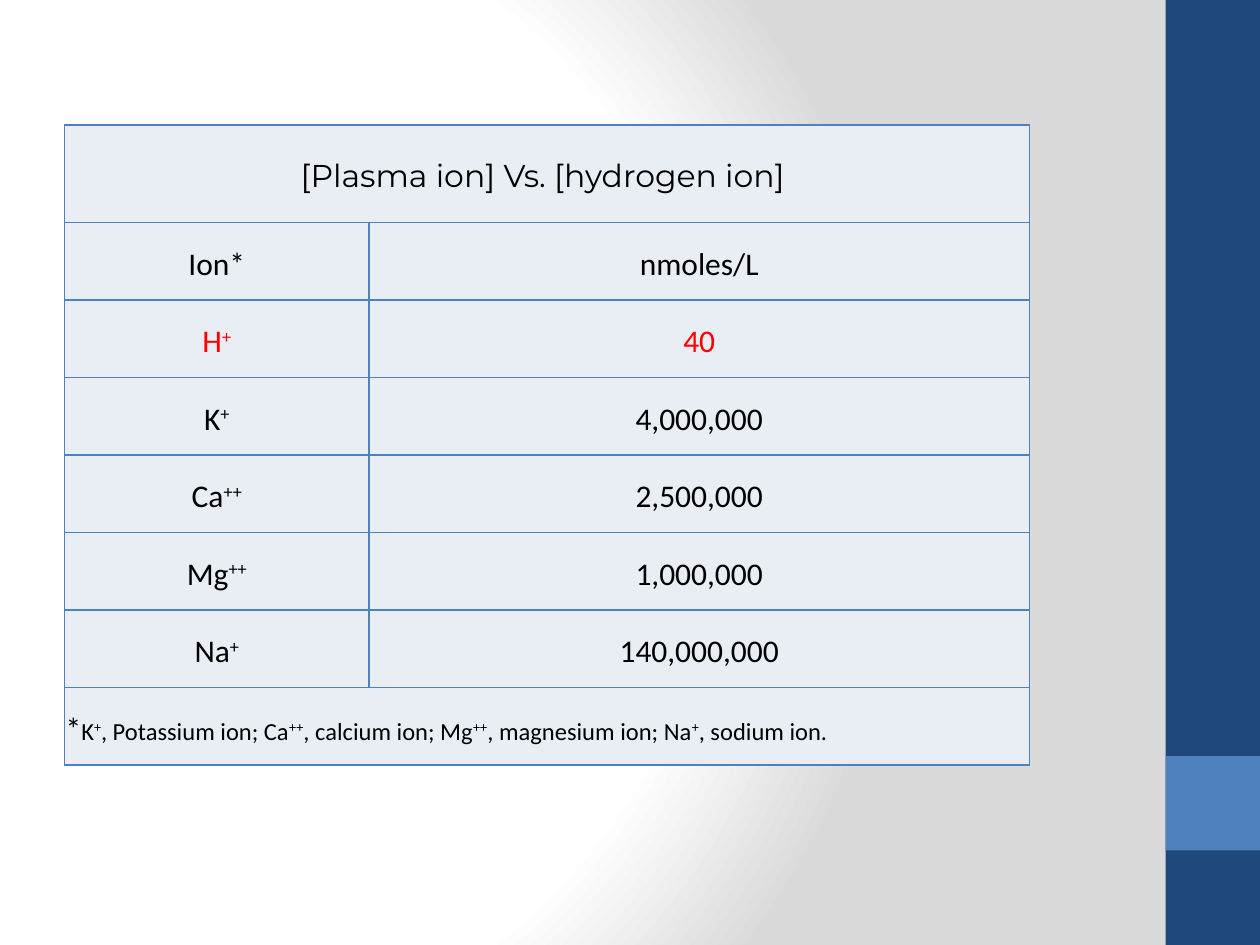
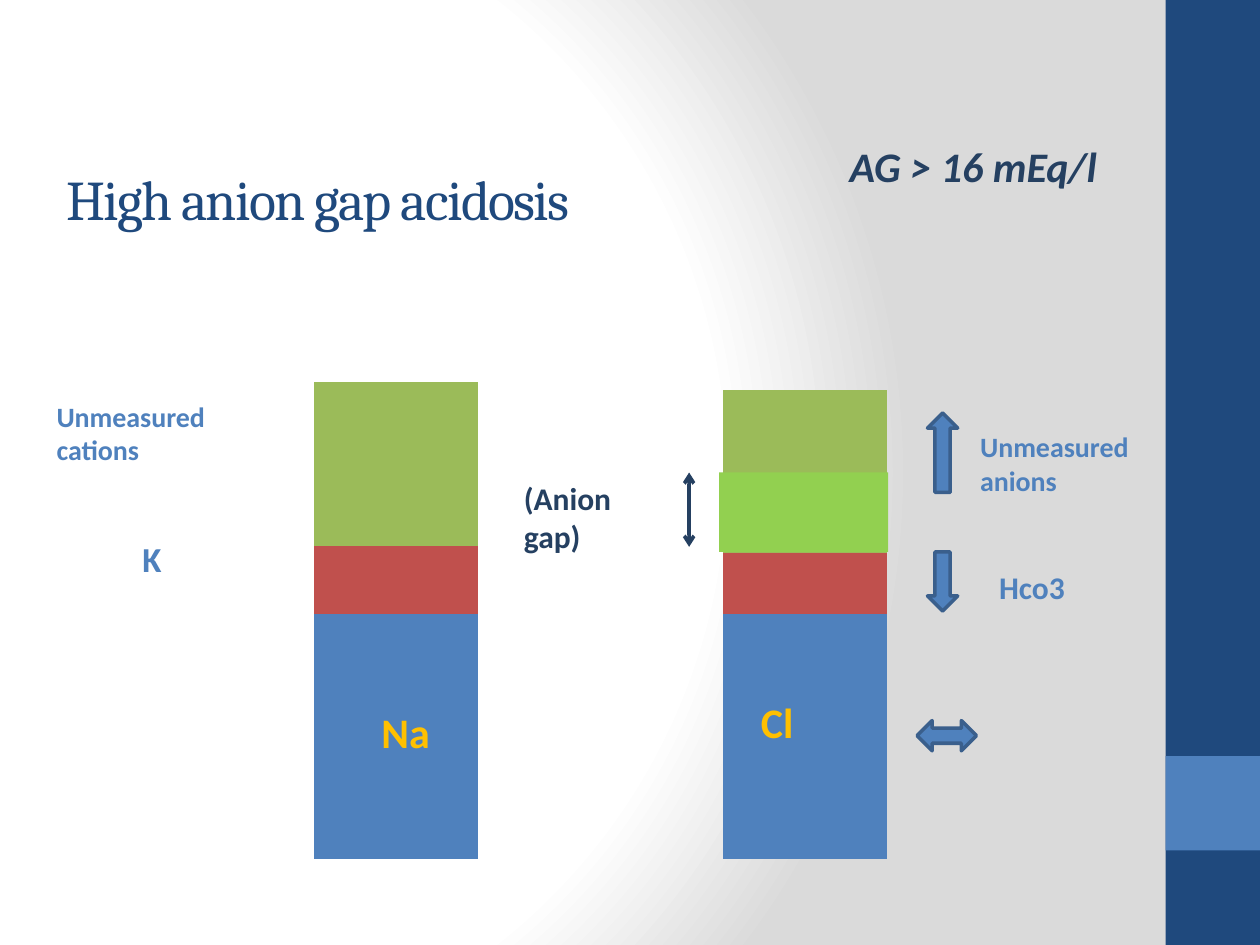
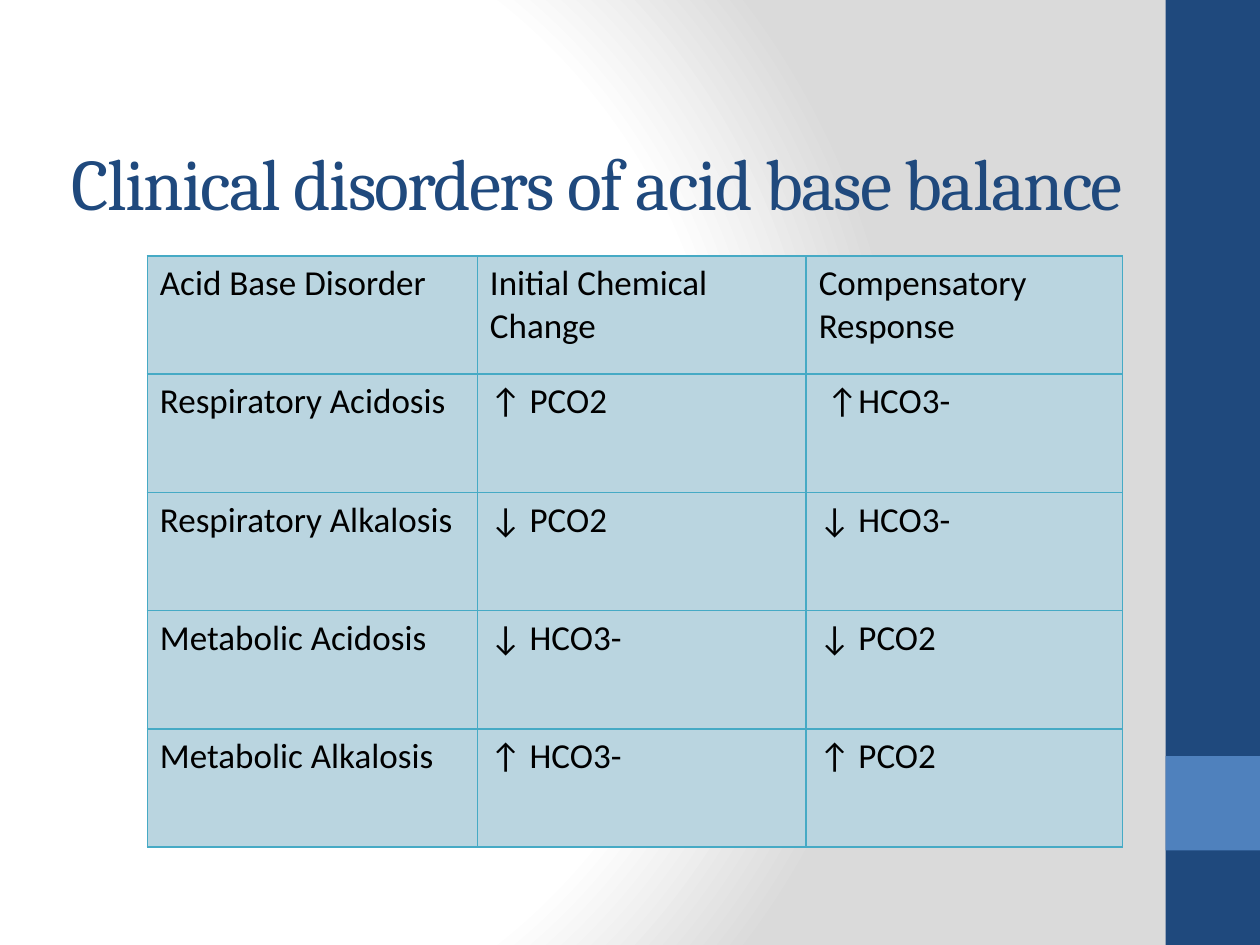
import lxml.etree
import pptx
import pptx.chart.data
import pptx.dml.color
import pptx.enum.chart
import pptx.enum.shapes
import pptx.enum.text
import pptx.oxml.ns
import pptx.util

Pt = pptx.util.Pt
RGBColor = pptx.dml.color.RGBColor
SHAPE = pptx.enum.shapes.MSO_SHAPE
ALIGN = pptx.enum.text.PP_ALIGN
ANCHOR = pptx.enum.text.MSO_ANCHOR
qn = pptx.oxml.ns.qn

WHITE = RGBColor(0xFF, 0xFF, 0xFF)
BLACK = RGBColor(0x00, 0x00, 0x00)
RED = RGBColor(0xFF, 0x00, 0x00)
GREY = RGBColor(0xDA, 0xDA, 0xDA)
NAVY = RGBColor(0x1F, 0x49, 0x7D)
DARK_BLUE = RGBColor(0x25, 0x40, 0x61)
BLUE = RGBColor(0x4F, 0x81, 0xBD)
ARROW_EDGE = RGBColor(0x3A, 0x5F, 0x8C)
BRICK = RGBColor(0xC0, 0x50, 0x4D)
OLIVE = RGBColor(0x9B, 0xBB, 0x59)
LIME = RGBColor(0x92, 0xD0, 0x50)
GOLD = RGBColor(0xFF, 0xC0, 0x00)
PALE_BLUE = RGBColor(0xE9, 0xED, 0xF4)
TEAL = RGBColor(0x46, 0xAA, 0xC5)
PALE_TEAL = RGBColor(0xBA, 0xD5, 0xE0)

BODY_FONT = "Calibri"
TITLE_FONT = "Cambria"


def add_xml(parent, tag, **attributes):
    return lxml.etree.SubElement(parent, qn(tag), **attributes)


def add_solid_fill(parent, color):
    add_xml(add_xml(parent, "a:solidFill"), "a:srgbClr", val=str(color))


def write(paragraph, text, size=18, color=BLACK, font=BODY_FONT, bold=False,
          italic=False, tracking=None, align=ALIGN.LEFT, line_spacing=None):
    """Append text to a paragraph; parts between ^ marks are superscript."""
    paragraph.alignment = align
    if line_spacing:
        paragraph.line_spacing = line_spacing
    for index, part in enumerate(text.split("^")):
        if not part:
            continue
        run = paragraph.add_run()
        run.text = part
        run.font.size = Pt(size)
        run.font.name = font
        run.font.color.rgb = color
        run.font.bold = bold
        run.font.italic = italic
        properties = run._r.get_or_add_rPr()
        if tracking:
            properties.set("spc", str(tracking * 100))
        if index % 2:
            properties.set("baseline", "30000")


class Deck:
    """Holds the shared style and the slide being filled."""

    def __init__(self):
        self.presentation = pptx.Presentation()
        self.presentation.slide_width = Pt(720)
        self.presentation.slide_height = Pt(540)
        self.slide = None
        self.set_background()

    def set_background(self):
        """Give the master a white glow that fades to grey on the right."""
        master = self.presentation.slide_master
        master.background.fill.gradient()
        gradient = master._element.find(".//" + qn("a:gradFill"))
        gradient.clear()
        stops = add_xml(gradient, "a:gsLst")
        for position, color in ((0, WHITE), (75, WHITE), (100, GREY)):
            stop = add_xml(stops, "a:gs", pos=str(position * 1000))
            add_xml(stop, "a:srgbClr", val=str(color))
        circle = add_xml(gradient, "a:path", path="circle")
        add_xml(circle, "a:fillToRect", l="20000", t="50000", r="100000", b="50000")

    def new_slide(self):
        self.slide = self.presentation.slides.add_slide(self.presentation.slide_layouts[6])
        self.shape(SHAPE.RECTANGLE, 666, 0, 54, 540, NAVY)
        self.shape(SHAPE.RECTANGLE, 666, 432, 54, 54, BLUE)

    def shape(self, kind, left, top, width, height, fill, edge=None, text=None, **style):
        shape = self.slide.shapes.add_shape(kind, Pt(left), Pt(top), Pt(width), Pt(height))
        shape.shadow.inherit = False
        shape.fill.solid()
        shape.fill.fore_color.rgb = fill
        if edge is None:
            shape.line.fill.background()
        else:
            shape.line.color.rgb = edge
            shape.line.width = Pt(2)
        if text:
            shape.text_frame.vertical_anchor = ANCHOR.TOP
            write(shape.text_frame.paragraphs[0], text, **style)

    def text(self, text, left, top, width, height, anchor=ANCHOR.TOP, **style):
        box = self.slide.shapes.add_textbox(Pt(left), Pt(top), Pt(width), Pt(height))
        box.text_frame.word_wrap = True
        box.text_frame.vertical_anchor = anchor
        write(box.text_frame.paragraphs[0], text, **style)

    def title(self, text, left, top, size):
        self.text(text, left, top, 648, 84, anchor=ANCHOR.MIDDLE, size=size,
                  color=NAVY, font=TITLE_FONT, tracking=-1)

    def double_arrow(self, x, top, bottom, color):
        arrow = self.slide.shapes.add_connector(
            pptx.enum.shapes.MSO_CONNECTOR.STRAIGHT, Pt(x), Pt(bottom), Pt(x), Pt(top))
        arrow.line.color.rgb = color
        arrow.line.width = Pt(2)
        line = arrow.line._get_or_add_ln()
        add_xml(line, "a:headEnd", type="arrow")
        add_xml(line, "a:tailEnd", type="arrow")
        add_xml(arrow._element.spPr, "a:effectLst")

    def table(self, left, top, widths, heights, fill, border):
        """Add an empty table with one fill and one border colour."""
        table = self.slide.shapes.add_table(
            len(heights), len(widths), Pt(left), Pt(top),
            Pt(sum(widths)), Pt(sum(heights))).table
        table.first_row = table.horz_banding = False
        for column, width in zip(table.columns, widths):
            column.width = Pt(width)
        for row, height in zip(table.rows, heights):
            row.height = Pt(height)
        for cell in table.iter_cells():
            properties = cell._tc.get_or_add_tcPr()
            for side in ("a:lnL", "a:lnR", "a:lnT", "a:lnB"):
                add_solid_fill(add_xml(properties, side, w=str(Pt(1))), border)
            cell.fill.solid()
            cell.fill.fore_color.rgb = fill
        return table

    def stacked_columns(self, left, top, width, height, categories, series, maximum):
        """Add a stacked column chart without axes; series are (name, values, colour)."""
        data = pptx.chart.data.CategoryChartData()
        data.categories = categories
        for name, values, _ in series:
            data.add_series(name, values)
        chart = self.slide.shapes.add_chart(
            pptx.enum.chart.XL_CHART_TYPE.COLUMN_STACKED,
            Pt(left), Pt(top), Pt(width), Pt(height), data).chart
        chart.has_legend = False
        chart.has_title = False
        chart.font.size = Pt(18)
        chart.font.name = BODY_FONT
        chart.font.color.rgb = BLACK
        chart.category_axis.visible = False
        chart.value_axis.visible = False
        chart.value_axis.has_major_gridlines = False
        chart.value_axis.minimum_scale = 0
        chart.value_axis.maximum_scale = maximum
        plot = chart.plots[0]
        plot.gap_width = 150
        plot.overlap = 100
        plot.vary_by_categories = False
        for column, (_, _, color) in zip(plot.series, series):
            column.format.fill.solid()
            column.format.fill.fore_color.rgb = color
        self.place_plot(chart, x=0.02, y=0.16, w=0.96, h=0.82)

    @staticmethod
    def place_plot(chart, **fractions):
        """Fix the inner plot area as fractions of the chart frame."""
        area = chart._chartSpace.find(".//" + qn("c:plotArea"))
        for automatic in area.findall(qn("c:layout")):
            area.remove(automatic)
        layout = add_xml(area, "c:layout")
        area.insert(0, layout)
        manual = add_xml(layout, "c:manualLayout")
        add_xml(manual, "c:layoutTarget", val="inner")
        for side in "xy":
            add_xml(manual, f"c:{side}Mode", val="edge")
        for side, fraction in fractions.items():
            add_xml(manual, f"c:{side}", val=str(fraction))


def plasma_ions(deck):
    deck.new_slide()
    ions = [("Ion*", "nmoles/L"), ("H^+^", "40"), ("K^+^", "4,000,000"),
            ("Ca^++^", "2,500,000"), ("Mg^++^", "1,000,000"), ("Na^+^", "140,000,000")]
    table = deck.table(36.8, 71.3, [174.2, 377.2], [56] + [44.3] * 7, PALE_BLUE, BLUE)
    for cell in table.iter_cells():
        cell.vertical_anchor = ANCHOR.MIDDLE
        cell.margin_left = cell.margin_right = Pt(0.7)
        cell.margin_top = cell.margin_bottom = Pt(0.7)
    for row in (0, 7):
        table.cell(row, 0).merge(table.cell(row, 1))

    centred = {"align": ALIGN.CENTER, "line_spacing": 1.15}
    heading = table.cell(0, 0).text_frame.paragraphs[0]
    write(heading, "[Plasma ion] Vs. [hydrogen ion] ", font="Montserrat", **centred)
    for row, values in enumerate(ions, 1):
        color = RED if values[0] == "H^+^" else BLACK
        for column, value in enumerate(values):
            write(table.cell(row, column).text_frame.paragraphs[0], value, color=color, **centred)
    note = table.cell(7, 0).text_frame.paragraphs[0]
    write(note, "*", line_spacing=1.15)
    write(note, "K^+^, Potassium ion; Ca^++^, calcium ion; Mg^++^, magnesium ion; "
                "Na^+^, sodium ion.", size=14, line_spacing=1.15)


def high_anion_gap(deck):
    deck.new_slide()
    deck.title("High anion gap acidosis", 31, 71.3, 32)
    deck.stacked_columns(99.4, 157, 487.4, 340.6, ["1", "2"], [
        ("Series 1", (100, 100), BLUE),
        ("Series 2", (28, 25), BRICK),
        ("Series 3", (67, 67), OLIVE)], maximum=200)
    deck.shape(SHAPE.RECTANGLE, 411, 270, 96.5, 45.4, LIME)
    deck.shape(SHAPE.RECTANGLE, 427.7, 394.6, 56.9, 39.6, BLUE,
               text="Cl", size=24, color=GOLD, bold=True)
    deck.shape(SHAPE.RECTANGLE, 201.6, 400.3, 51.1, 42.5, BLUE,
               text="Na", size=24, color=GOLD, bold=True, align=ALIGN.RIGHT)

    label = {"color": BLUE, "bold": True}
    deck.text("Unmeasured anions", 553, 242, 124.6, 51, size=16, **label)
    deck.text("Hco3", 563.8, 321.1, 73.4, 39.6, **label)
    deck.double_arrow(393.8, 270, 312.5, DARK_BLUE)
    deck.text("(Anion gap)", 292.3, 270, 79.2, 51, color=DARK_BLUE, bold=True)
    deck.text("Unmeasured cations", 25.2, 224.6, 130.3, 51, size=16, **label)
    deck.text("K", 59.8, 303.8, 39.6, 45.4, size=20, align=ALIGN.RIGHT, **label)
    for kind, left, top, width, height in (
            (SHAPE.UP_ARROW, 530, 236, 17.3, 45.4),
            (SHAPE.DOWN_ARROW, 530, 315.4, 17.3, 33.8),
            (SHAPE.LEFT_RIGHT_ARROW, 524, 411.8, 34, 17.3)):
        deck.shape(kind, left, top, width, height, BLUE, edge=ARROW_EDGE)
    deck.text(" AG > 16 mEq/l", 473, 77, 215.3, 36, size=24, color=DARK_BLUE,
              bold=True, italic=True)


def clinical_disorders(deck):
    deck.new_slide()
    deck.title("Clinical disorders of acid base balance", 33.8, 62, 41.4)
    disorders = [
        ("Acid Base Disorder", "Initial Chemical Change", "Compensatory Response"),
        ("Respiratory Acidosis", "↑ PCO2", " ↑HCO3-"),
        ("Respiratory Alkalosis", "↓ PCO2", "↓ HCO3-"),
        ("Metabolic Acidosis", "↓ HCO3-", "↓ PCO2"),
        ("Metabolic Alkalosis", "↑ HCO3-", "↑ PCO2")]
    table = deck.table(84.2, 146.2, [188.6, 187.9, 180.7], [67.6] * 5, PALE_TEAL, TEAL)
    for row, values in enumerate(disorders):
        for column, value in enumerate(values):
            write(table.cell(row, column).text_frame.paragraphs[0], value, size=20)


def main():
    deck = Deck()
    plasma_ions(deck)
    high_anion_gap(deck)
    clinical_disorders(deck)
    deck.presentation.save("out.pptx")


if __name__ == "__main__":
    main()
